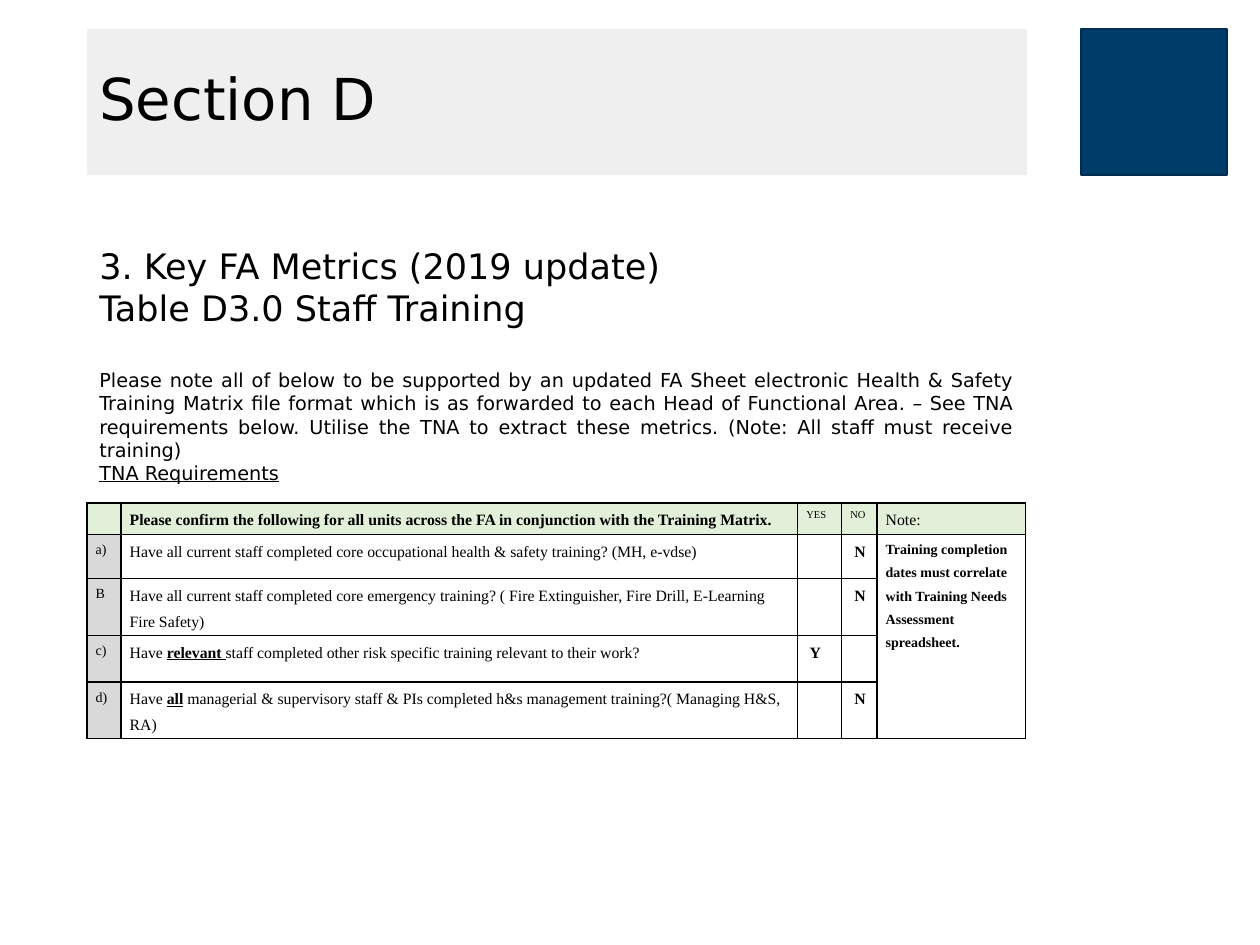
import pptx
import pptx.dml.color
import pptx.enum.shapes
import pptx.enum.text
import pptx.util
from lxml import etree
from pptx.oxml.ns import qn

Inches = pptx.util.Inches
Pt = pptx.util.Pt
RGBColor = pptx.dml.color.RGBColor
ALIGN = pptx.enum.text.PP_ALIGN
ANCHOR = pptx.enum.text.MSO_ANCHOR

BLACK = RGBColor(0x00, 0x00, 0x00)
NAVY = RGBColor(0x00, 0x3C, 0x69)
DARK_NAVY = RGBColor(0x00, 0x2C, 0x4E)
LIGHT_GREY = RGBColor(0xEF, 0xEF, 0xF0)
HEADER_GREEN = RGBColor(0xE2, 0xEF, 0xD9)
LABEL_GREY = RGBColor(0xD9, 0xD9, 0xD9)
WHITE = RGBColor(0xFF, 0xFF, 0xFF)
SANS, SERIF = "DejaVu Sans", "Times New Roman"

LEFT, WIDTH = 0.69, 7.46
COLUMNS = [0.27, 5.37, 0.35, 0.28, 1.18]
ROWS = [0.25, 0.35, 0.41, 0.37, 0.41]

INTRO = [  # text, size, space before, underlined
    ("3. Key FA Metrics (2019 update)", 20, 0, False),
    ("Table D3.0 Staff Training", 20, 0, False),
    ("Please note all of below to be supported by an updated FA Sheet electronic "
     "Health & Safety Training Matrix file format which is as forwarded to each Head "
     "of Functional Area. – See TNA requirements below. Utilise the TNA to extract "
     "these metrics. (Note: All staff must receive training)", 11, 23, False),
    ("TNA Requirements", 11, 0, True),
]

HEADER = [  # text, size, bold
    ("", 9, False),
    ("Please confirm the following for all units across the FA in conjunction with "
     "the Training Matrix.", 9, True),
    ("YES", 6, False),
    ("NO", 6, False),
    ("Note:", 9, False),
]
QUESTIONS = [  # label, (plain, emphasised, plain), yes, no
    ("a)", ("Have all current staff completed core occupational health & safety "
            "training? (MH, e-vdse)", "", ""), "", " N"),
    ("B", ("Have all current staff completed core emergency training? ( Fire "
           "Extinguisher, Fire Drill, E-Learning Fire Safety)", "", ""), "", " N"),
    ("c)", ("Have ", "relevant ", "staff completed other risk specific training "
            "relevant to their work?"), " Y", ""),
    ("d)", ("Have ", "all", " managerial & supervisory staff & PIs completed h&s "
            "management training?( Managing H&S, RA)"), "", " N"),
]
NOTE = ("Training completion dates must correlate with Training Needs Assessment "
        "spreadsheet.")


def add_run(p, text, size, font, bold=False, underline=False):
    r = p.add_run()
    r.text = text
    r.font.size = Pt(size)
    r.font.name = font
    r.font.bold = bold
    r.font.underline = underline
    r.font.color.rgb = BLACK


def add_block(s, left, width, fill, line=None):
    sp = s.shapes.add_shape(pptx.enum.shapes.MSO_SHAPE.RECTANGLE, Inches(left),
                            Inches(0.23), Inches(width), Inches(1.16))
    sp.shadow.inherit = False
    sp.fill.solid()
    sp.fill.fore_color.rgb = fill
    if line is None:
        sp.line.fill.background()
    else:
        sp.line.color.rgb = line
        sp.line.width = Pt(1)
    return sp


def add_title(s):
    tf = add_block(s, LEFT, WIDTH, LIGHT_GREY).text_frame
    tf.vertical_anchor = ANCHOR.MIDDLE
    p = tf.paragraphs[0]
    p.alignment = ALIGN.LEFT
    p.line_spacing = 0.9
    add_run(p, "Section D", 33, SANS)


def add_intro(s):
    tf = s.shapes.add_textbox(Inches(LEFT), Inches(1.89), Inches(WIDTH),
                              Inches(2.05)).text_frame
    tf.word_wrap = True
    for i, (text, size, before, underline) in enumerate(INTRO):
        p = tf.add_paragraph() if i else tf.paragraphs[0]
        p.alignment = ALIGN.JUSTIFY
        if before:
            p.space_before = Pt(before)
        add_run(p, text, size, SANS, underline=underline)


def set_borders(cell):
    """Draw a thin black line on each side of the cell."""
    props = cell._tc.get_or_add_tcPr()
    for i, side in enumerate(("lnL", "lnR", "lnT", "lnB")):
        ln = etree.Element(qn("a:" + side), w=str(Pt(1)))
        fill = etree.SubElement(ln, qn("a:solidFill"))
        etree.SubElement(fill, qn("a:srgbClr"), val=str(BLACK))
        props.insert(i, ln)


def fill_cell(cell, runs, size, fill=WHITE, align=ALIGN.LEFT):
    """Write (text, bold, underline) runs into the cell and style it."""
    cell.margin_left = cell.margin_right = Inches(0.07)
    cell.margin_top = cell.margin_bottom = 0
    cell.fill.solid()
    cell.fill.fore_color.rgb = fill
    set_borders(cell)
    p = cell.text_frame.paragraphs[0]
    p.alignment = align
    p.line_spacing = 1.5
    for text, bold, underline in runs:
        if text:
            add_run(p, text, size, SERIF, bold, underline)
    if not p.runs:
        etree.SubElement(p._p, qn("a:endParaRPr"), sz=str(size * 100))


def add_training_table(s):
    table = s.shapes.add_table(len(ROWS), len(COLUMNS), Inches(LEFT), Inches(3.99),
                               Inches(sum(COLUMNS)), Inches(sum(ROWS))).table
    for column, width in zip(table.columns, COLUMNS):
        column.width = Inches(width)
    for row, height in zip(table.rows, ROWS):
        row.height = Inches(height)

    for c, (text, size, bold) in enumerate(HEADER):
        fill_cell(table.cell(0, c), [(text, bold, False)], size, HEADER_GREEN,
                  ALIGN.JUSTIFY)
    for r, (label, (start, emphasis, end), yes, no) in enumerate(QUESTIONS, 1):
        fill_cell(table.cell(r, 0), [(label, False, False)], 8, LABEL_GREY)
        question = [(start, False, False), (emphasis, True, True), (end, False, False)]
        fill_cell(table.cell(r, 1), question, 9)
        for c, answer in ((2, yes), (3, no)):
            fill_cell(table.cell(r, c), [(answer, True, False)], 9, align=ALIGN.JUSTIFY)
        fill_cell(table.cell(r, 4), [(NOTE if r == 1 else "", True, False)], 8)
    table.cell(1, 4).merge(table.cell(len(QUESTIONS), 4))


def main():
    prs = pptx.Presentation()
    prs.slide_width, prs.slide_height = Inches(10), Inches(7.5)
    s = prs.slides.add_slide(prs.slide_layouts[6])
    add_block(s, 8.58, 1.16, NAVY, DARK_NAVY)
    add_title(s)
    add_intro(s)
    add_training_table(s)
    prs.save("out.pptx")


if __name__ == "__main__":
    main()
